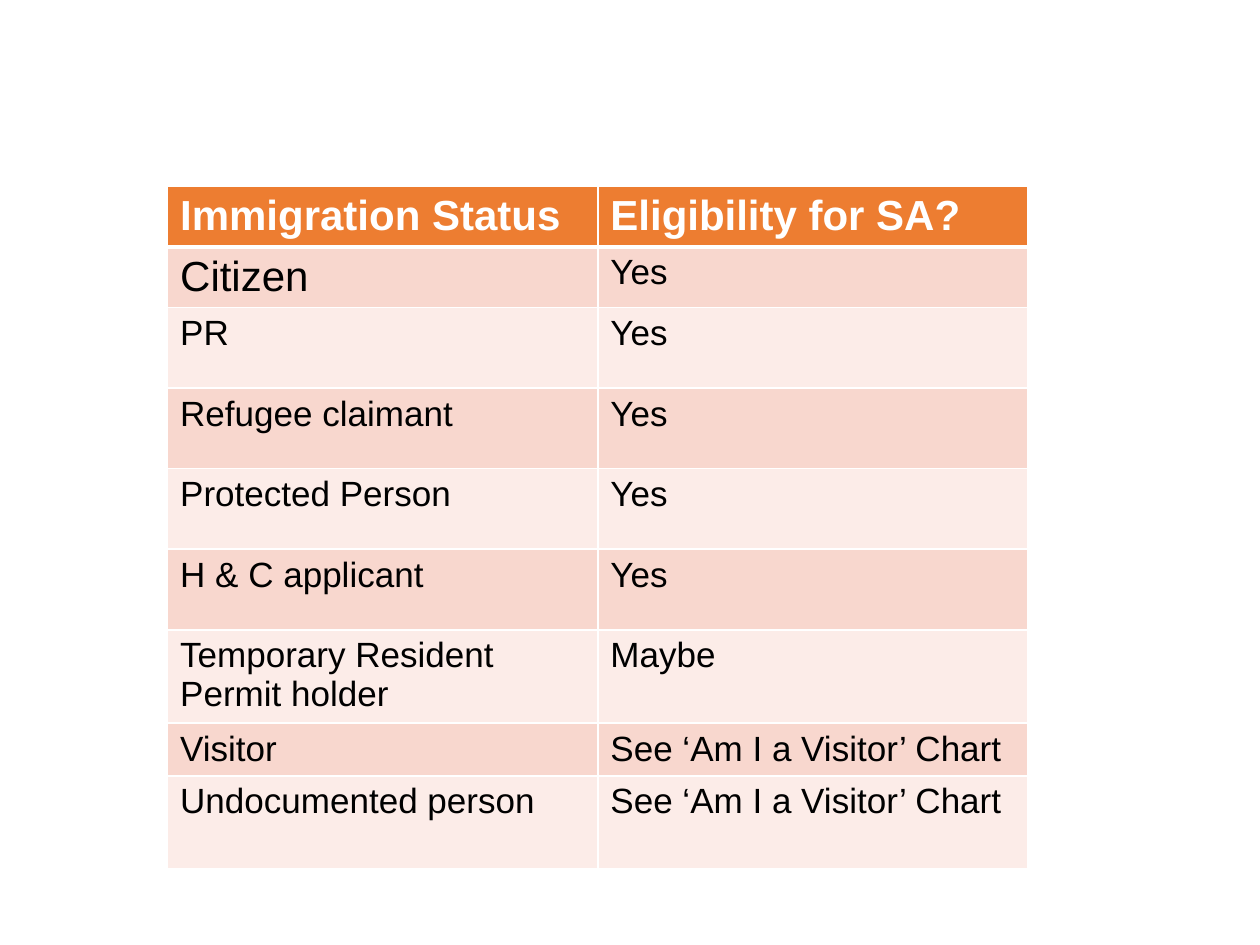
from lxml.etree import SubElement
from pptx import Presentation
from pptx.dml.color import RGBColor
from pptx.oxml.ns import qn
from pptx.util import Inches, Pt

HEADER_FILL = "ED7D31"
BAND_FILLS = ("F8D7CE", "FCECE8")
WHITE, BLACK = "FFFFFF", "000000"

HEADINGS = ("Immigration Status", "Eligibility for SA?")
SEE_CHART = "See ‘Am I a Visitor’ Chart"
STATUSES = [  # status, eligibility, row height in inches
    ("Citizen", "Yes", 0.48),
    ("PR", "Yes", 0.64),
    ("Refugee claimant", "Yes", 0.64),
    ("Protected Person", "Yes", 0.64),
    ("H & C applicant", "Yes", 0.64),
    ("Temporary Resident Permit holder", "Maybe", 0.74),
    ("Visitor", SEE_CHART, 0.42),
    ("Undocumented person", SEE_CHART, 0.74),
]
HEADER_HEIGHT = 0.48


def color(value):
    return RGBColor.from_string(value)


def set_borders(cell, top=1, bottom=1):
    """Draw white borders; the fill must be set afterwards to keep XML order."""
    props = cell._tc.get_or_add_tcPr()
    for side, width in (("L", 1), ("R", 1), ("T", top), ("B", bottom)):
        line = SubElement(props, qn(f"a:ln{side}"), w=str(Pt(width)))
        fill = SubElement(line, qn("a:solidFill"))
        SubElement(fill, qn("a:srgbClr"), val=WHITE)


def style_cell(cell, text, fill, ink, size, bold=False, top=1, bottom=1):
    set_borders(cell, top, bottom)
    cell.fill.solid()
    cell.fill.fore_color.rgb = color(fill)
    cell.text = text
    font = cell.text_frame.paragraphs[0].font
    font.name, font.size, font.bold = "Arial", Pt(size), bold
    font.color.rgb = color(ink)


def add_eligibility_table(page, left, top, width):
    heights = [HEADER_HEIGHT] + [height for _, _, height in STATUSES]
    frame = page.shapes.add_table(len(heights), len(HEADINGS), left, top,
                                  width, Inches(sum(heights)))
    table = frame.table
    for row, height in zip(table.rows, heights):
        row.height = Inches(height)

    for column, heading in enumerate(HEADINGS):
        style_cell(table.cell(0, column), heading, HEADER_FILL, WHITE, 24,
                   bold=True, bottom=3)
    for index, (status, eligibility, _) in enumerate(STATUSES):
        for column, text in enumerate((status, eligibility)):
            size = 24 if text == "Citizen" else 20
            style_cell(table.cell(index + 1, column), text,
                       BAND_FILLS[index % 2], BLACK, size,
                       top=3 if index == 0 else 1)


def main():
    deck = Presentation()
    deck.slide_width, deck.slide_height = Inches(10), Inches(7.5)
    page = deck.slides.add_slide(deck.slide_layouts[6])
    add_eligibility_table(page, Inches(1.33), Inches(1.48), Inches(6.83))
    deck.save("out.pptx")


if __name__ == "__main__":
    main()
